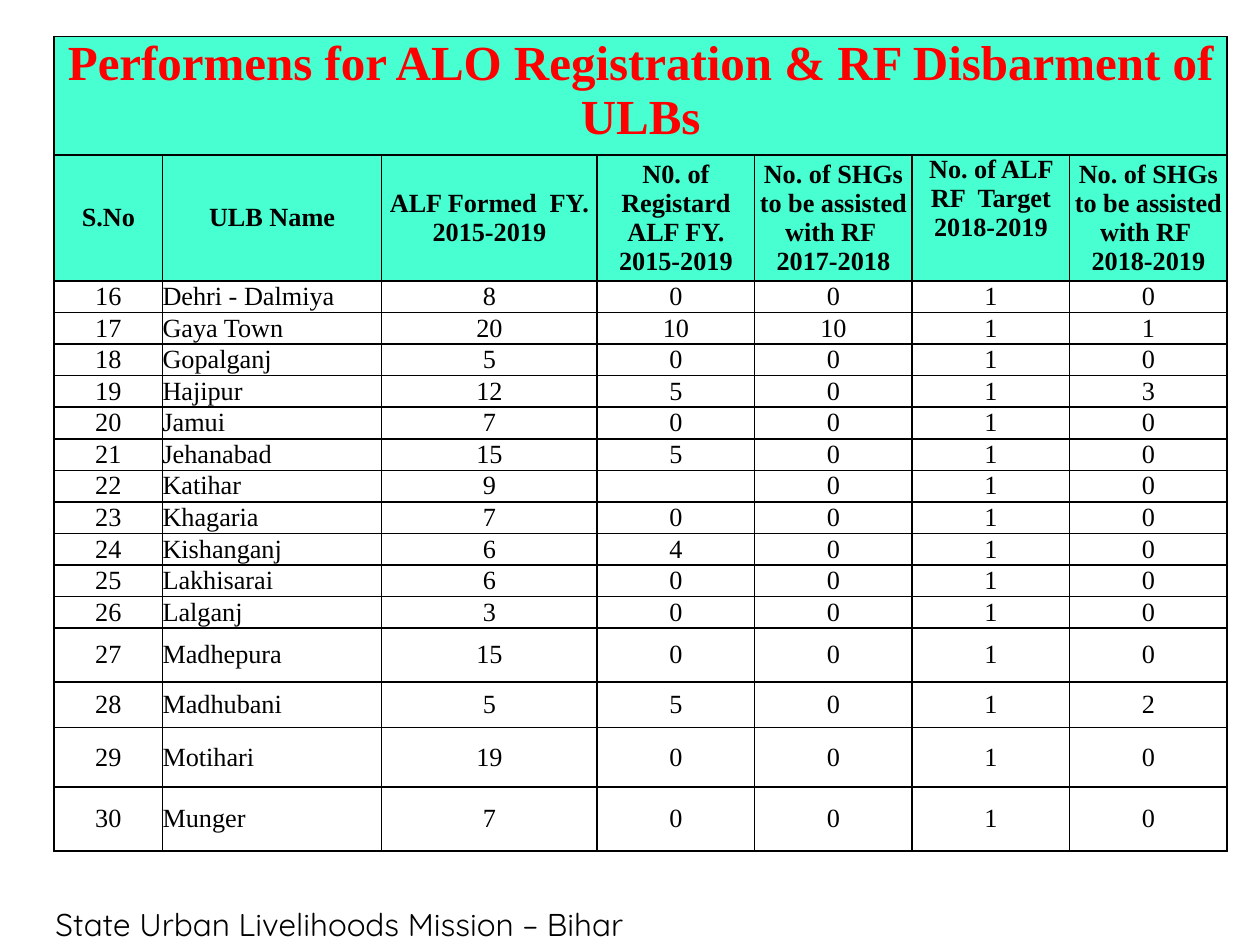
from lxml.etree import SubElement
from pptx import Presentation
from pptx.dml.color import RGBColor
from pptx.enum.text import MSO_ANCHOR, PP_ALIGN
from pptx.oxml.ns import qn
from pptx.util import Inches, Pt

COLORS = {"ink": "000000", "title": "FF0000", "band": "47FFD1"}
SERIF = "Times New Roman"

TITLE = "Performens for ALO Registration & RF Disbarment of ULBs"
HEADINGS = [
    "S.No",
    "ULB Name",
    "ALF Formed  FY. 2015-2019",
    "N0. of Registard ALF FY. 2015-2019",
    "No. of SHGs to be assisted with RF  2017-2018",
    "No. of ALF RF  Target 2018-2019",
    "No. of SHGs to be assisted with RF  2018-2019",
]
TOWNS = [
    ("Dehri - Dalmiya", 8, 0, 0, 1, 0),
    ("Gaya Town", 20, 10, 10, 1, 1),
    ("Gopalganj", 5, 0, 0, 1, 0),
    ("Hajipur", 12, 5, 0, 1, 3),
    ("Jamui", 7, 0, 0, 1, 0),
    ("Jehanabad", 15, 5, 0, 1, 0),
    ("Katihar", 9, "", 0, 1, 0),
    ("Khagaria", 7, 0, 0, 1, 0),
    ("Kishanganj", 6, 4, 0, 1, 0),
    ("Lakhisarai", 6, 0, 0, 1, 0),
    ("Lalganj", 3, 0, 0, 1, 0),
    ("Madhepura", 15, 0, 0, 1, 0),
    ("Madhubani", 5, 5, 0, 1, 2),
    ("Motihari", 19, 0, 0, 1, 0),
    ("Munger", 7, 0, 0, 1, 0),
]
COLUMN_WIDTHS = [0.86, 1.74, 1.71] + [1.25] * 4
ROW_HEIGHTS = [0.94, 1] + [0.25] * 11 + [0.43, 0.36, 0.47, 0.51]

THIN_EDGES = {(2, 4, "L"), (2, 6, "L")}
for column in (3, 5):
    THIN_EDGES |= {(2, column, "R"), (2, column, "B"), (3, column, "T")}


def write(frame, text, size=15, font=SERIF, color="ink", bold=False, align=PP_ALIGN.CENTER):
    paragraph = frame.paragraphs[0]
    paragraph.alignment = align
    if not text:
        SubElement(paragraph._p, qn("a:endParaRPr"), sz=str(size * 100))
        return
    run = paragraph.add_run()
    run.text = text
    run.font.size = Pt(size)
    run.font.name = font
    run.font.bold = bold
    run.font.color.rgb = RGBColor.from_string(COLORS[color])


def draw_borders(cell, row, column):
    properties = cell._tc.get_or_add_tcPr()
    for side in "LRTB":
        weight = 0.5 if (row, column, side) in THIN_EDGES else 1
        edge = SubElement(properties, qn(f"a:ln{side}"), w=str(Pt(weight)))
        SubElement(SubElement(edge, qn("a:solidFill")), qn("a:srgbClr"), val=COLORS["ink"])


deck = Presentation()
deck.slide_width = Inches(10)
deck.slide_height = Inches(7.5)
slide = deck.slides.add_slide(deck.slide_layouts[6])

footer = slide.shapes.add_textbox(Inches(0.28), Inches(7.13), Inches(6.45), Inches(0.4)).text_frame
footer.word_wrap = True
footer.margin_left = Inches(0.16)
write(footer, "State Urban Livelihoods Mission – Bihar", size=18, font="Quicksand", align=PP_ALIGN.LEFT)

records = [[TITLE] + [""] * 6, HEADINGS]
records += [[number, *town] for number, town in enumerate(TOWNS, start=16)]

progress = slide.shapes.add_table(
    len(records), len(HEADINGS), Inches(0.43), Inches(0.29),
    Inches(sum(COLUMN_WIDTHS)), Inches(sum(ROW_HEIGHTS)),
).table
progress.first_row = False
progress.horz_banding = False
for column, width in zip(progress.columns, COLUMN_WIDTHS):
    column.width = Inches(width)
for row, height in zip(progress.rows, ROW_HEIGHTS):
    row.height = Inches(height)
progress.cell(0, 0).merge(progress.cell(0, len(HEADINGS) - 1))

for row, record in enumerate(records):
    for column, value in enumerate(record):
        cell = progress.cell(row, column)
        cell.margin_left = cell.margin_right = cell.margin_top = cell.margin_bottom = 0
        top_aligned = row == 0 or (row, column) == (1, 5)
        cell.vertical_anchor = MSO_ANCHOR.TOP if top_aligned else MSO_ANCHOR.MIDDLE
        draw_borders(cell, row, column)
        if row < 2:
            cell.fill.solid()
            cell.fill.fore_color.rgb = RGBColor.from_string(COLORS["band"])
        else:
            cell.fill.background()
        write(
            cell.text_frame,
            str(value),
            size=28 if row == 0 else 15,
            color="title" if row == 0 else "ink",
            bold=row < 2,
            align=PP_ALIGN.LEFT if row > 1 and column == 1 else PP_ALIGN.CENTER,
        )

deck.save("out.pptx")
